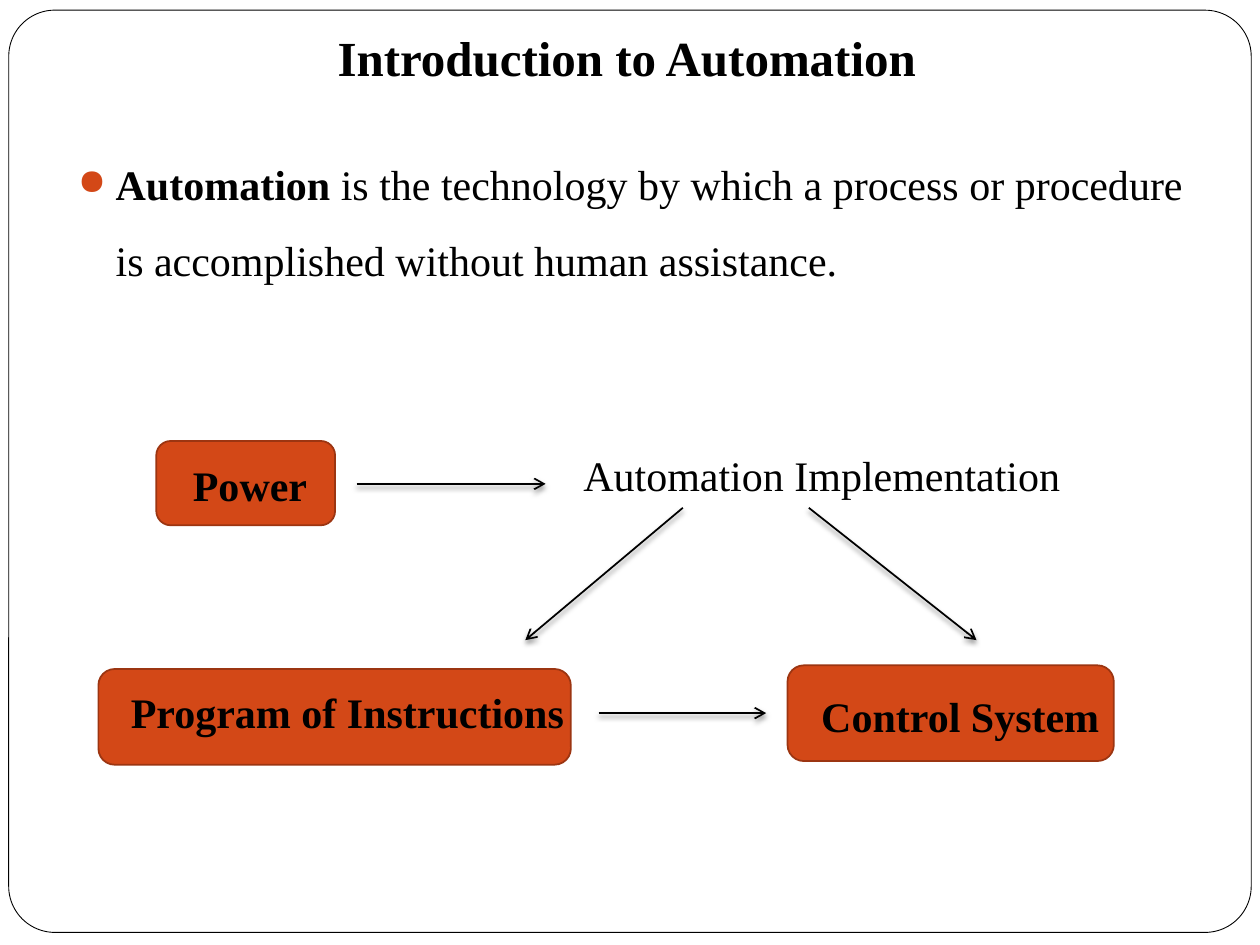
"""Build the slide that introduces automation and its three basic elements."""
from lxml.etree import SubElement
from pptx import Presentation
from pptx.dml.color import RGBColor
from pptx.enum.shapes import MSO_CONNECTOR, MSO_SHAPE
from pptx.enum.text import PP_ALIGN
from pptx.oxml import parse_xml
from pptx.oxml.ns import nsdecls, qn
from pptx.util import Pt

BLACK = RGBColor(0x00, 0x00, 0x00)
WHITE = RGBColor(0xFF, 0xFF, 0xFF)
ORANGE = RGBColor(0xD3, 0x48, 0x17)
RUST = RGBColor(0x9C, 0x35, 0x11)

BODY_FONT = {"name": "Times New Roman", "size": Pt(24), "bold": False}
BOLD_FONT = {**BODY_FONT, "bold": True}
TITLE_FONT = {**BOLD_FONT, "size": Pt(28)}

FRAME = (5, 5.8, 710, 527)
LABELS = [
    ("Introduction to Automation", (185.8, 12.2, 358.6, 41), TITLE_FONT),
    ("Automation Implementation", (326.2, 253.4, 339.8, 36), BODY_FONT),
]
DEFINITION = [
    ("Automation", BOLD_FONT),
    (" is the technology by which a process or procedure "
     "is accomplished without human assistance.", BODY_FONT),
]
DEFINITION_BOX = (37.4, 72.5, 649, 100)
ELEMENTS = [
    ("Power", (89.3, 252, 102.2, 48.2), (95, 259.2, 95.8, 48.2), PP_ALIGN.CENTER),
    ("Program of Instructions", (56.2, 382.3, 270, 54.7), (67.7, 388.8, 342.7, 36), PP_ALIGN.LEFT),
    ("Control System", (450, 380.2, 186.5, 54.7), (462.2, 391, 228.2, 36), PP_ALIGN.LEFT),
]
ARROWS = [
    (203.8, 276.5, 311.8, 276.5),
    (342, 407.5, 437.8, 407.5),
    (462.2, 290.2, 558, 365.8),
    (390.2, 290.2, 300.2, 365.8),
]
ARROW_SHADOW = (
    f'<a:effectLst {nsdecls("a")}><a:outerShdw blurRad="38100" dist="25400" '
    'dir="5400000" rotWithShape="0"><a:srgbClr val="000000">'
    '<a:alpha val="50000"/></a:srgbClr></a:outerShdw></a:effectLst>'
)


def points(values):
    return [Pt(value) for value in values]


def add_rounded(slide, box, fill, outline, width, corner):
    panel = slide.shapes.add_shape(MSO_SHAPE.ROUNDED_RECTANGLE, *points(box))
    panel.adjustments[0] = corner
    panel.shadow.inherit = False
    panel.fill.solid()
    panel.fill.fore_color.rgb = fill
    panel.line.color.rgb = outline
    panel.line.width = Pt(width)


def add_text(slide, box, runs, align=PP_ALIGN.LEFT):
    frame = slide.shapes.add_textbox(*points(box)).text_frame
    frame.word_wrap = True
    paragraph = frame.paragraphs[0]
    paragraph.alignment = align
    for words, style in runs:
        run = paragraph.add_run()
        run.text = words
        run.font.color.rgb = BLACK
        for key, value in style.items():
            setattr(run.font, key, value)
    return paragraph


def add_bullet(paragraph, indent):
    properties = paragraph._p.get_or_add_pPr()
    properties.set("marL", str(Pt(indent)))
    properties.set("indent", str(-Pt(indent)))
    color = SubElement(properties, qn("a:buClr"))
    SubElement(color, qn("a:srgbClr"), val=str(ORANGE))
    SubElement(properties, qn("a:buSzPct"), val="85000")
    SubElement(properties, qn("a:buChar"), char="●")


def add_arrow(slide, ends):
    arrow = slide.shapes.add_connector(MSO_CONNECTOR.STRAIGHT, *points(ends))
    arrow.line.color.rgb = BLACK
    arrow.line.width = Pt(1)
    SubElement(arrow.line._get_or_add_ln(), qn("a:tailEnd"), type="arrow")
    arrow._element.spPr.append(parse_xml(ARROW_SHADOW))


def main():
    deck = Presentation()
    deck.slide_width, deck.slide_height = Pt(720), Pt(540)
    slide = deck.slides.add_slide(deck.slide_layouts[6])
    add_rounded(slide, FRAME, WHITE, BLACK, 0.5, 0.05)
    definition = add_text(slide, DEFINITION_BOX, DEFINITION)
    definition.line_spacing = Pt(43.5)
    add_bullet(definition, 21.6)
    for name, box, label_box, align in ELEMENTS:
        add_rounded(slide, box, ORANGE, RUST, 1, 0.17)
        add_text(slide, label_box, [(name, BOLD_FONT)], align)
    for words, box, style in LABELS:
        add_text(slide, box, [(words, style)])
    for ends in ARROWS:
        add_arrow(slide, ends)
    deck.save("out.pptx")


if __name__ == "__main__":
    main()
